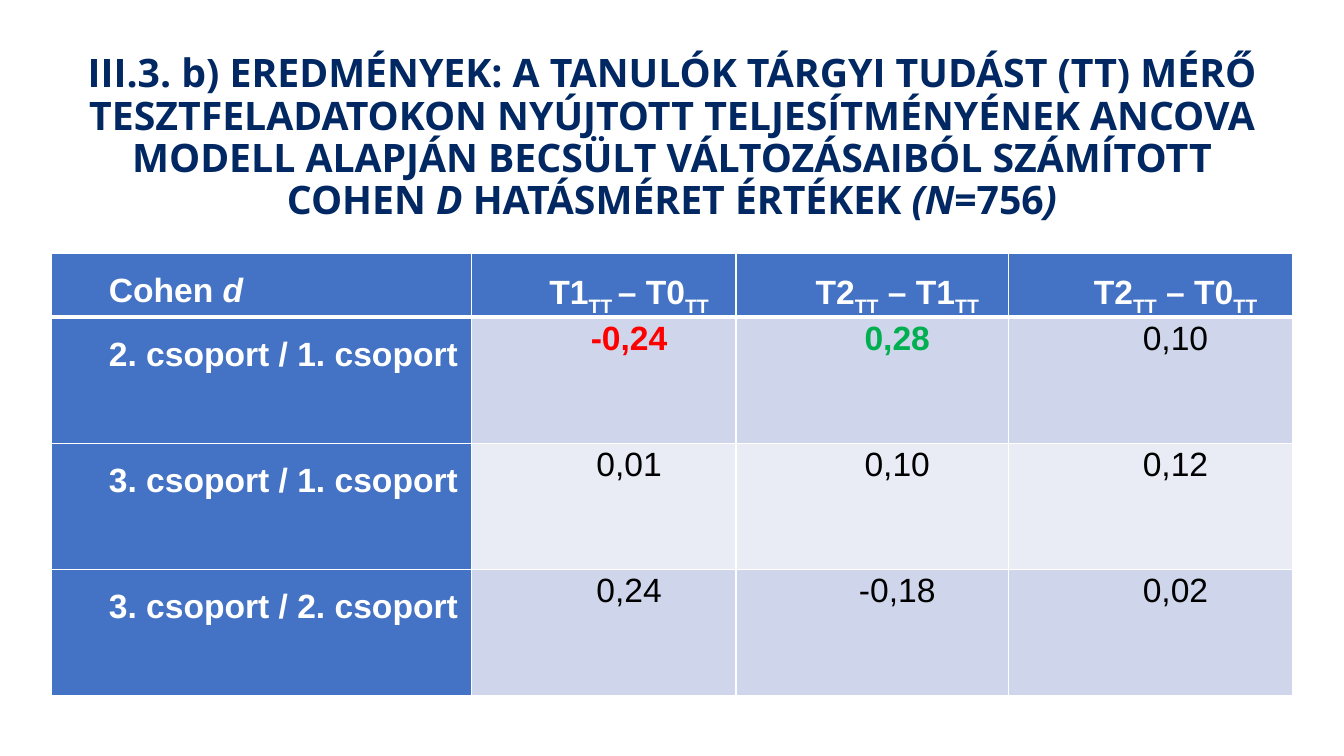
from lxml import etree
from pptx import Presentation
from pptx.dml.color import RGBColor
from pptx.enum.text import MSO_ANCHOR, PP_ALIGN
from pptx.oxml.ns import qn
from pptx.util import Inches, Pt

CENTER, LEFT = PP_ALIGN.CENTER, PP_ALIGN.LEFT
MIDDLE = MSO_ANCHOR.MIDDLE

NAVY = RGBColor(0x01, 0x28, 0x63)
BLUE = RGBColor(0x44, 0x72, 0xC4)
BAND_DARK = RGBColor(0xCF, 0xD5, 0xEA)
BAND_LIGHT = RGBColor(0xE9, 0xEB, 0xF5)
WHITE = RGBColor(0xFF, 0xFF, 0xFF)
BLACK = RGBColor(0, 0, 0)
RED = RGBColor(0xFF, 0, 0)
GREEN = RGBColor(0, 0xB0, 0x50)

TITLE = [
    ("III.3. b) EREDMÉNYEK: A TANULÓK TÁRGYI TUDÁST (TT) MÉRŐ "
     "TESZTFELADATOKON NYÚJTOTT TELJESÍTMÉNYÉNEK ANCOVA MODELL ALAPJÁN "
     "BECSÜLT VÁLTOZÁSAIBÓL SZÁMÍTOTT COHEN ", False),
    ("D", True), (" HATÁSMÉRET ÉRTÉKEK ", False),
    ("(N", True), ("=756", False), (")", True),
]
COMPARISONS = [
    [("T1", False), ("TT ", True), ("– T0", False), ("TT", True)],
    [("T2", False), ("TT", True), (" – T1", False), ("TT", True)],
    [("T2", False), ("TT", True), (" – T0", False), ("TT", True)],
]
EFFECTS = [
    ("2. csoport / 1. csoport", ["-0,24", "0,28", "0,10"]),
    ("3. csoport / 1. csoport", ["0,01", "0,10", "0,12"]),
    ("3. csoport / 2. csoport", ["0,24", "-0,18", "0,02"]),
]
HIGHLIGHTS = {"-0,24": RED, "0,28": GREEN}
COL_WIDTHS = [4.17, 2.62, 2.7, 2.82]
HEADER_HEIGHT, ROW_HEIGHT = 0.58, 1.25


def add_run(p, text, font, size, color, bold=True, italic=False):
    r = p.add_run()
    r.text = text
    r.font.name, r.font.size = font, Pt(size)
    r.font.bold, r.font.italic = bold, italic
    r.font.color.rgb = color
    return r


def add_title(s, x, y, w, h):
    sp = s.shapes.title
    sp.left, sp.top, sp.width, sp.height = (Inches(v) for v in (x, y, w, h))
    tf = sp.text_frame
    tf.word_wrap = True
    tf.vertical_anchor = MIDDLE
    p = tf.paragraphs[0]
    p.alignment, p.line_spacing = CENTER, 0.9
    for text, italic in TITLE:
        add_run(p, text, "Open Sans", 28, NAVY, italic=italic)


def add_border(tcPr, side, width):
    ln = etree.SubElement(tcPr, qn(f"a:ln{side}"), w=str(Pt(width)))
    fill = etree.SubElement(ln, qn("a:solidFill"))
    etree.SubElement(fill, qn("a:srgbClr"), val=str(WHITE))


def format_cell(cell, row, fill, align, spacing):
    """Style an empty cell and return its paragraph, ready for runs."""
    cell.margin_left = cell.margin_right = Inches(0.07)
    cell.margin_top = cell.margin_bottom = 0
    tcPr = cell._tc.get_or_add_tcPr()
    for side in "LRTB":
        header_rule = (row, side) in ((0, "B"), (1, "T"))
        add_border(tcPr, side, 3 if header_rule else 1)
    cell.fill.solid()
    cell.fill.fore_color.rgb = fill
    p = cell.text_frame.paragraphs[0]
    p.alignment, p.line_spacing = align, spacing
    pPr = p._p.get_or_add_pPr()
    pPr.set("marL", str(Inches(0.5)))
    pPr.set("indent", "0")
    return p


def add_effect_table(s, x, y):
    height = HEADER_HEIGHT + ROW_HEIGHT * len(EFFECTS)
    table = s.shapes.add_table(
        len(EFFECTS) + 1, len(COL_WIDTHS), Inches(x), Inches(y),
        Inches(sum(COL_WIDTHS)), Inches(height)).table
    table.first_row = table.horz_banding = False
    for col, width in zip(table.columns, COL_WIDTHS):
        col.width = Inches(width)
    for i, row in enumerate(table.rows):
        row.height = Inches(ROW_HEIGHT if i else HEADER_HEIGHT)

    p = format_cell(table.cell(0, 0), 0, BLUE, LEFT, 1.5)
    add_run(p, "Cohen ", "Arial", 24, WHITE)
    add_run(p, "d", "Arial", 24, WHITE, italic=True)
    for j, parts in enumerate(COMPARISONS, 1):
        p = format_cell(table.cell(0, j), 0, BLUE, CENTER, 1.5)
        for text, subscript in parts:
            r = add_run(p, text, "Arial", 24, WHITE)
            if subscript:
                r.font._element.set("baseline", "-25000")

    for i, (groups, values) in enumerate(EFFECTS, 1):
        p = format_cell(table.cell(i, 0), i, BLUE, LEFT, 1.5)
        add_run(p, groups, "Arial", 24, WHITE)
        band = BAND_DARK if i % 2 else BAND_LIGHT
        for j, value in enumerate(values, 1):
            p = format_cell(table.cell(i, j), i, band, CENTER, 1.07)
            p.space_after = Pt(8)
            add_run(p, value, "Arial", 24, HIGHLIGHTS.get(value, BLACK),
                    bold=value in HIGHLIGHTS)


def main():
    prs = Presentation()
    prs.slide_width, prs.slide_height = Inches(13.33), Inches(7.5)
    s = prs.slides.add_slide(prs.slide_layouts[5])
    add_effect_table(s, 0.51, 2.51)
    add_title(s, 0.51, 0.38, 12.31, 1.99)
    prs.save("out.pptx")


if __name__ == "__main__":
    main()
